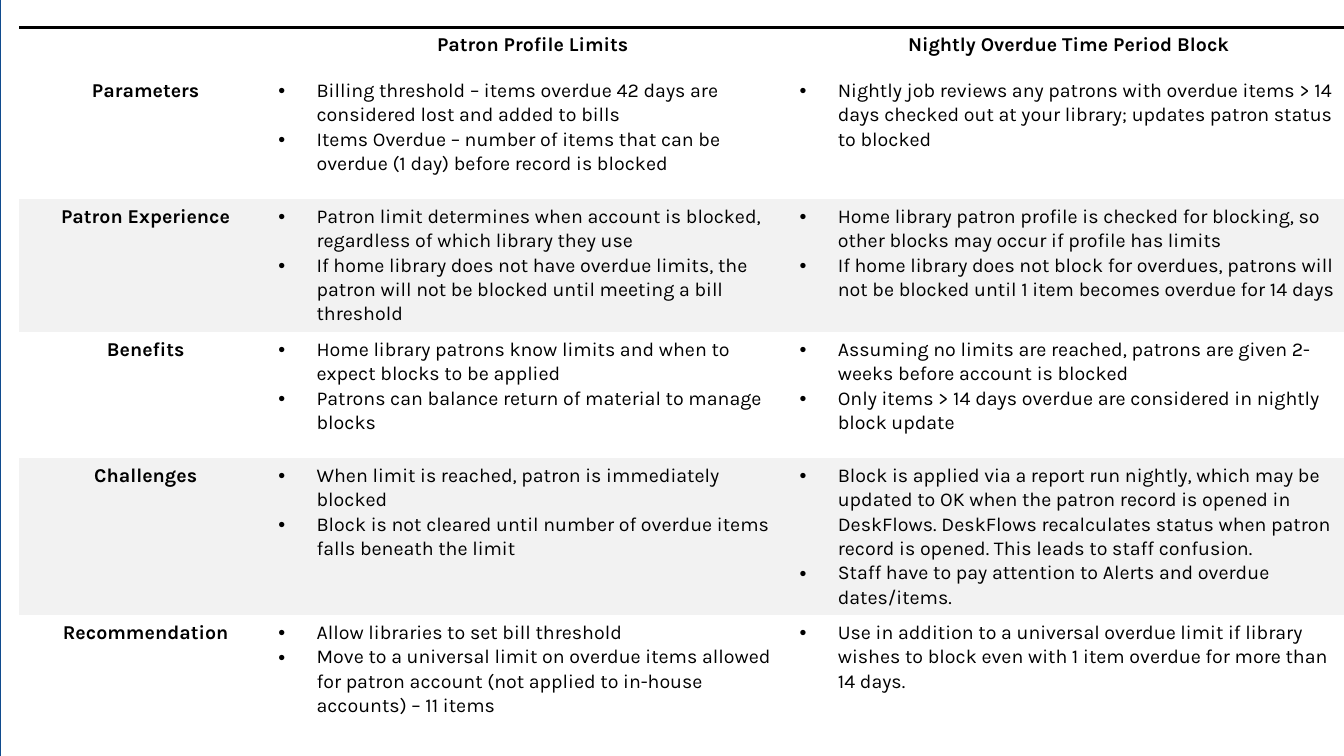
from lxml import etree
from pptx import Presentation
from pptx import util as u
from pptx.dml.color import RGBColor
from pptx.enum import shapes, text
from pptx.oxml.ns import qn

COLORS = {"paper": "FFFFFF", "frame": "104B8E", "ink": "000000", "band": "F2F2F2"}
FONT = "Karla"
PLAIN = "{2D5ABB26-0587-4C30-8999-92F81FD0307C}"  # table style without grid
WIDTHS = [2.51, 5.17, 5.46]
HEIGHTS = [0.45, 1.25, 1.32, 1.25, 1.56, 1.07]
HEADS = ["", "Patron Profile Limits", "Nightly Overdue Time Period Block"]
ROWS = [
    ("Parameters",
     ["Billing threshold – items overdue 42 days are considered lost and added to bills",
      "Items Overdue – number of items that can be overdue (1 day) before record is blocked"],
     ["Nightly job reviews any patrons with overdue items > 14 days checked out at your "
      "library; updates patron status to blocked"]),
    ("Patron Experience",
     ["Patron limit determines when account is blocked, regardless of which library they use",
      "If home library does not have overdue limits, the patron will not be blocked until "
      "meeting a bill threshold"],
     ["Home library patron profile is checked for blocking, so other blocks may occur if "
      "profile has limits",
      "If home library does not block for overdues, patrons will not be blocked until 1 item "
      "becomes overdue for 14 days"]),
    ("Benefits",
     ["Home library patrons know limits and when to expect blocks to be applied",
      "Patrons can balance return of material to manage blocks"],
     ["Assuming no limits are reached, patrons are given 2-weeks before account is blocked",
      "Only items > 14 days overdue are considered in nightly block update"]),
    ("Challenges",
     ["When limit is reached, patron is immediately blocked",
      "Block is not cleared until number of overdue items falls beneath the limit"],
     ["Block is applied via a report run nightly, which may be updated to OK when the patron "
      "record is opened in DeskFlows. DeskFlows recalculates status when patron record is "
      "opened. This leads to staff confusion.",
      "Staff have to pay attention to Alerts and overdue dates/items."]),
    ("Recommendation",
     ["Allow libraries to set bill threshold",
      "Move to a universal limit on overdue items allowed for patron account (not applied to "
      "in-house accounts) – 11 items"],
     ["Use in addition to a universal overdue limit if library wishes to block even with 1 "
      "item overdue for more than 14 days."]),
]


def color(name):
    return RGBColor.from_string(COLORS[name])


def add_frame(slide):
    frame = slide.shapes.add_shape(
        shapes.MSO_SHAPE.RECTANGLE,
        u.Inches(0), u.Inches(-0.11), u.Inches(13.45), u.Inches(7.74))
    frame.shadow.inherit = False
    frame.fill.solid()
    frame.fill.fore_color.rgb = color("paper")
    frame.line.color.rgb = color("frame")
    frame.line.width = u.Pt(1)


def add_bullet(para):
    props = para._p.get_or_add_pPr()
    props.set("marL", str(u.Inches(0.38)))
    props.set("indent", str(u.Inches(-0.38)))
    etree.SubElement(props, qn("a:buFont")).set("typeface", "Arial")
    etree.SubElement(props, qn("a:buChar")).set("char", "•")


def add_rule(cell):
    """Draw the heavy line on top of a cell."""
    line = etree.Element(qn("a:lnT"), w=str(u.Pt(2.25)))
    fill = etree.SubElement(line, qn("a:solidFill"))
    etree.SubElement(fill, qn("a:srgbClr")).set("val", COLORS["ink"])
    cell._tc.get_or_add_tcPr().insert(0, line)


def fill_cell(cell, lines, bullets, band):
    cell.margin_left = cell.margin_right = u.Inches(0.06)
    cell.margin_top = cell.margin_bottom = u.Inches(0.05)
    if band:
        cell.fill.solid()
        cell.fill.fore_color.rgb = color("band")
    else:
        cell.fill.background()
    frame = cell.text_frame
    frame.text = "\n".join(lines)
    for para in frame.paragraphs:
        para.line_spacing = 1.07
        if bullets:
            add_bullet(para)
        else:
            para.alignment = text.PP_ALIGN.CENTER
        para.font.name = FONT
        para.font.size = u.Pt(14)
        para.font.bold = not bullets
        para.font.color.rgb = color("ink")


def add_grid(slide):
    shape = slide.shapes.add_table(
        len(HEIGHTS), len(WIDTHS), u.Inches(0.19), u.Inches(0.27),
        u.Inches(sum(WIDTHS)), u.Inches(sum(HEIGHTS)))
    table = shape.table
    table.first_row = table.horz_banding = False
    table._tbl.tblPr.find(qn("a:tableStyleId")).text = PLAIN
    for col, width in zip(table.columns, WIDTHS):
        col.width = u.Inches(width)
    for row, height in zip(table.rows, HEIGHTS):
        row.height = u.Inches(height)

    # Header row
    for c, head in enumerate(HEADS):
        fill_cell(table.cell(0, c), [head], False, False)
        add_rule(table.cell(0, c))

    # Body rows, every second one shaded
    for r, (label, *points) in enumerate(ROWS, 1):
        band = r % 2 == 0
        fill_cell(table.cell(r, 0), [label], False, band)
        for c, lines in enumerate(points, 1):
            fill_cell(table.cell(r, c), lines, True, band)


def main():
    prs = Presentation()
    prs.slide_width, prs.slide_height = u.Inches(13.33), u.Inches(7.5)
    slide = prs.slides.add_slide(prs.slide_layouts[6])
    add_frame(slide)
    add_grid(slide)
    prs.save("out.pptx")


if __name__ == "__main__":
    main()
